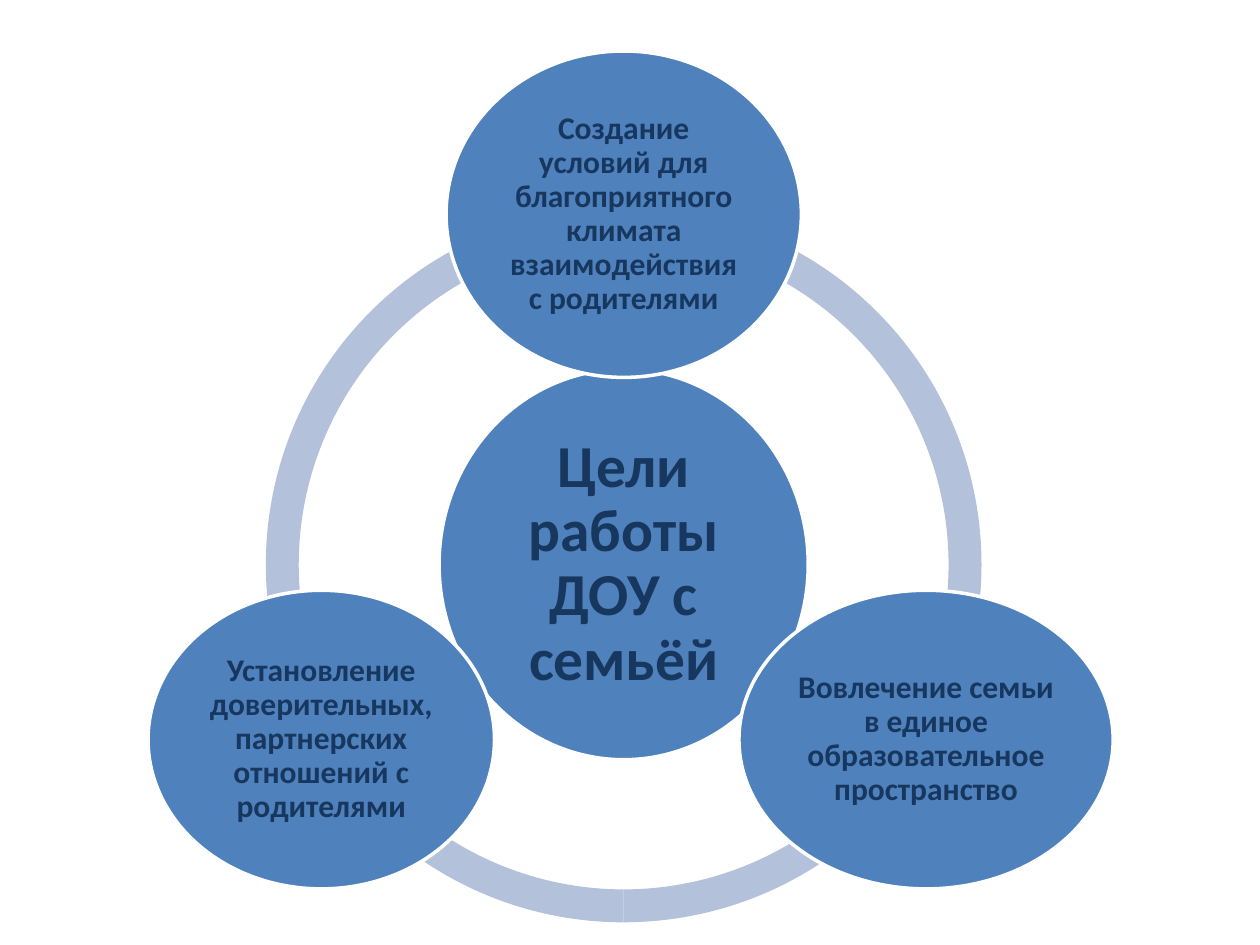
from dataclasses import dataclass

from pptx import Presentation
from pptx.dml.color import RGBColor
from pptx.enum.shapes import MSO_SHAPE
from pptx.enum.text import MSO_ANCHOR, PP_ALIGN
from pptx.shapes.autoshape import Shape
from pptx.slide import Slide
from pptx.util import Inches, Pt

BLOCK_ARC = MSO_SHAPE.BLOCK_ARC
OVAL = MSO_SHAPE.OVAL
MIDDLE = MSO_ANCHOR.MIDDLE
CENTER = PP_ALIGN.CENTER
BLANK_LAYOUT = 6


@dataclass(frozen=True)
class Theme:
    ring: RGBColor = RGBColor(0xB3, 0xC1, 0xDB)
    bubble: RGBColor = RGBColor(0x4F, 0x81, 0xBD)
    outline: RGBColor = RGBColor(0xFF, 0xFF, 0xFF)
    text: RGBColor = RGBColor(0x17, 0x37, 0x5E)
    font: str = "Calibri"
    title_size: int = 34
    goal_size: int = 18
    outline_width: int = 2


@dataclass(frozen=True)
class Bubble:
    text: str
    center_x: float
    center_y: float
    width: float
    height: float
    size: int
    inset: float


THEME = Theme()
CENTER_X, CENTER_Y = 4.95, 4.48
RING_DIAMETER = 5.68
RING_THICKNESS = 0.046
DEGREE = 0.6
RING_STOPS = (90, 162, 18)

BUBBLES = (
    Bubble("Цели работы ДОУ с семьёй",
           CENTER_X, CENTER_Y, 2.93, 3.1, THEME.title_size, 0.05),
    Bubble("Создание условий для благоприятного климата взаимодействия с родителями",
           CENTER_X, 1.7, 2.82, 2.59, THEME.goal_size, 0.03),
    Bubble("Вовлечение семьи в единое образовательное пространство",
           7.35, 5.87, 2.97, 2.37, THEME.goal_size, 0.03),
    Bubble("Установление доверительных, партнерских отношений с родителями",
           2.55, 5.87, 2.75, 2.37, THEME.goal_size, 0.03),
)


def set_format(target: object, values: dict[str, object]) -> None:
    for name, value in values.items():
        setattr(target, name, value)


def add_centered_shape(slide: Slide, kind: MSO_SHAPE, center_x: float, center_y: float,
                       width: float, height: float, color: RGBColor) -> Shape:
    shape = slide.shapes.add_shape(
        kind, Inches(center_x - width / 2), Inches(center_y - height / 2),
        Inches(width), Inches(height))
    shape.shadow.inherit = False
    shape.fill.solid()
    shape.fill.fore_color.rgb = color
    return shape


def add_ring_arc(slide: Slide, start: int, end: int) -> None:
    arc = add_centered_shape(slide, BLOCK_ARC, CENTER_X, CENTER_Y,
                             RING_DIAMETER, RING_DIAMETER, THEME.ring)
    arc.line.fill.background()
    for index, value in enumerate((start * DEGREE, end * DEGREE, RING_THICKNESS)):
        arc.adjustments[index] = value


def add_bubble(slide: Slide, bubble: Bubble) -> None:
    oval = add_centered_shape(slide, OVAL, bubble.center_x, bubble.center_y,
                              bubble.width, bubble.height, THEME.bubble)
    oval.line.color.rgb = THEME.outline
    oval.line.width = Pt(THEME.outline_width)
    frame = oval.text_frame
    margins = {f"margin_{side}": Inches(bubble.inset)
               for side in ("left", "top", "right", "bottom")}
    set_format(frame, {"word_wrap": True, "vertical_anchor": MIDDLE, **margins})
    paragraph = frame.paragraphs[0]
    set_format(paragraph, {"text": bubble.text, "alignment": CENTER, "line_spacing": 0.9})
    font = paragraph.runs[0].font
    set_format(font, {"name": THEME.font, "size": Pt(bubble.size), "bold": True})
    font.color.rgb = THEME.text


def main() -> None:
    presentation = Presentation()
    presentation.slide_width = Inches(10)
    presentation.slide_height = Inches(7.5)
    slide = presentation.slides.add_slide(presentation.slide_layouts[BLANK_LAYOUT])
    left_stop, top_stop, right_stop = RING_STOPS
    for start, end in ((left_stop, top_stop), (right_stop, left_stop), (top_stop, right_stop)):
        add_ring_arc(slide, start, end)
    for bubble in BUBBLES:
        add_bubble(slide, bubble)
    presentation.save("out.pptx")


if __name__ == "__main__":
    main()
